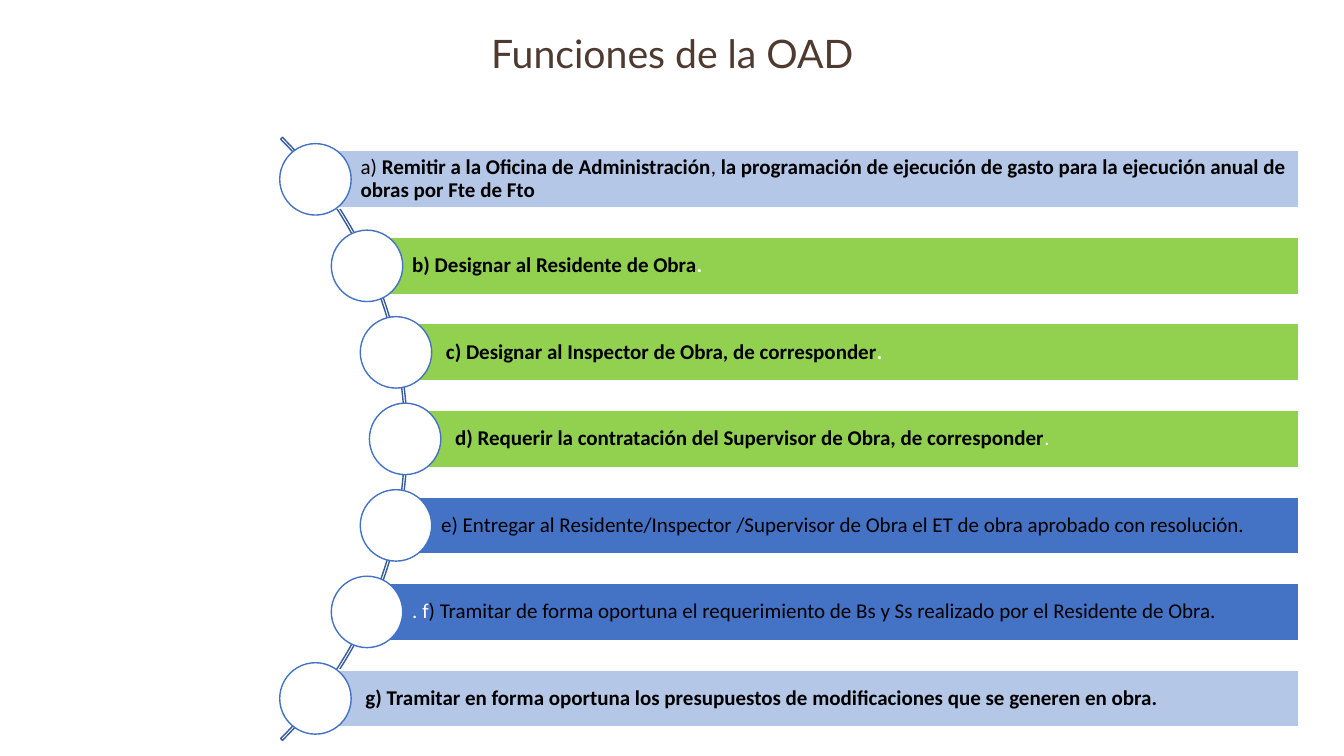
import pptx
import pptx.util
import pptx.dml.color
import pptx.enum.shapes
import pptx.enum.text

Cm, Pt = pptx.util.Cm, pptx.util.Pt
SHAPE = pptx.enum.shapes.MSO_SHAPE
ALIGN = pptx.enum.text.PP_ALIGN

COLORS = {
    "title": "4E3A2F", "black": "000000", "white": "FFFFFF",
    "pale": "B4C7E7", "green": "92D050", "blue": "4472C4", "arc": "365B9D",
}

# Bar colour, then runs of (text, bold, colour)
DUTIES = [
    ("pale", [("a) ", False, "black"),
              ("Remitir a la Oficina de Administración", True, "black"),
              (", ", False, "black"),
              ("la programación de ejecución de gasto para la ejecución anual"
               " de obras por Fte de Fto", True, "black")]),
    ("green", [("b) Designar al Residente de Obra", True, "black"),
               (".", True, "white")]),
    ("green", [(" ", True, "white"),
               ("c) Designar al Inspector de Obra, de corresponder", True, "black"),
               (".", True, "white")]),
    ("green", [(" ", True, "white"),
               ("d) Requerir la contratación del Supervisor de Obra, de corresponder",
                True, "black"),
               (".", False, "white")]),
    ("blue", [("e) Entregar al Residente/Inspector /Supervisor de Obra el ET de"
               " obra aprobado con resolución.", False, "black")]),
    ("blue", [(". f", False, "white"),
              (") Tramitar de forma oportuna el requerimiento de Bs y Ss"
               " realizado por el Residente de Obra.", False, "black")]),
    ("pale", [(" ", False, "white"),
              ("g) Tramitar en forma oportuna los presupuestos de modificaciones"
               " que se generen en obra.", True, "black")]),
]

# Left shift of a row by its distance in rows from the middle one
SHIFTS = [0, 0.23, 0.96, 2.26]
PITCH, BAR, DISC, ARC = 2.18, 1.44, 1.8, 21.49


def shade(name):
    return pptx.dml.color.RGBColor.from_string(COLORS[name])


def write(shape, runs, font, size, align, pads):
    """Fill the text frame with one paragraph; pads are left, top, right, bottom."""
    frame = shape.text_frame
    frame.word_wrap = True
    frame.vertical_anchor = pptx.enum.text.MSO_ANCHOR.MIDDLE
    (frame.margin_left, frame.margin_top,
     frame.margin_right, frame.margin_bottom) = map(Cm, pads)
    para = frame.paragraphs[0]
    para.alignment = align
    para.line_spacing = 0.9
    for text, bold, color in runs:
        run = para.add_run()
        run.text = text
        run.font.name = font
        run.font.size = Pt(size)
        run.font.bold = bold
        run.font.color.rgb = shade(color)


def draw(slide, kind, box, fill, line):
    shape = slide.shapes.add_shape(kind, *map(Cm, box))
    shape.shadow.inherit = False
    if fill:
        shape.fill.solid()
        shape.fill.fore_color.rgb = shade(fill)
    else:
        shape.fill.background()
    shape.line.color.rgb = shade(line)
    shape.line.width = Pt(1)
    return shape


def add_title(slide, box):
    label = slide.shapes.add_textbox(*map(Cm, box))
    write(label, [("Funciones de la OAD", False, "title")],
          "Lato", 28, ALIGN.CENTER, (0, 0, 0, 0))


def add_row(slide, left, mid, right, color, runs):
    """Draw one bar with its disc centred on the bar's left end."""
    bar = draw(slide, SHAPE.RECTANGLE,
               (left, mid - BAR / 2, right - left, BAR), color, "white")
    write(bar, runs, "Calibri", 15, ALIGN.LEFT, (1.14, 0.1, 0.1, 0.1))
    draw(slide, SHAPE.OVAL,
         (left - DISC / 2, mid - DISC / 2, DISC, DISC), "white", "blue")


def add_list(slide, box):
    """Draw the arc and rows; the box's left edge is the middle row's start."""
    left, top, width, height = box
    mid = top + height / 2
    arc = draw(slide, SHAPE.BLOCK_ARC,
               (left - 10.69 - ARC / 2, mid - ARC / 2, ARC, ARC), None, "arc")
    for i, value in enumerate((189, 27, 0.003)):
        arc.adjustments[i] = value
    half = len(DUTIES) // 2
    for i, (color, runs) in enumerate(DUTIES):
        step = i - half
        add_row(slide, left - SHIFTS[abs(step)], mid + step * PITCH,
                left + width, color, runs)


def main():
    deck = pptx.Presentation()
    deck.slide_width, deck.slide_height = Cm(33.87), Cm(19.05)
    slide = deck.slides.add_slide(deck.slide_layouts[6])
    add_title(slide, (7.72, 0.81, 18.44, 1.19))
    add_list(slide, (10.21, 3.8, 22.52, 14.52))
    deck.save("out.pptx")


if __name__ == "__main__":
    main()
